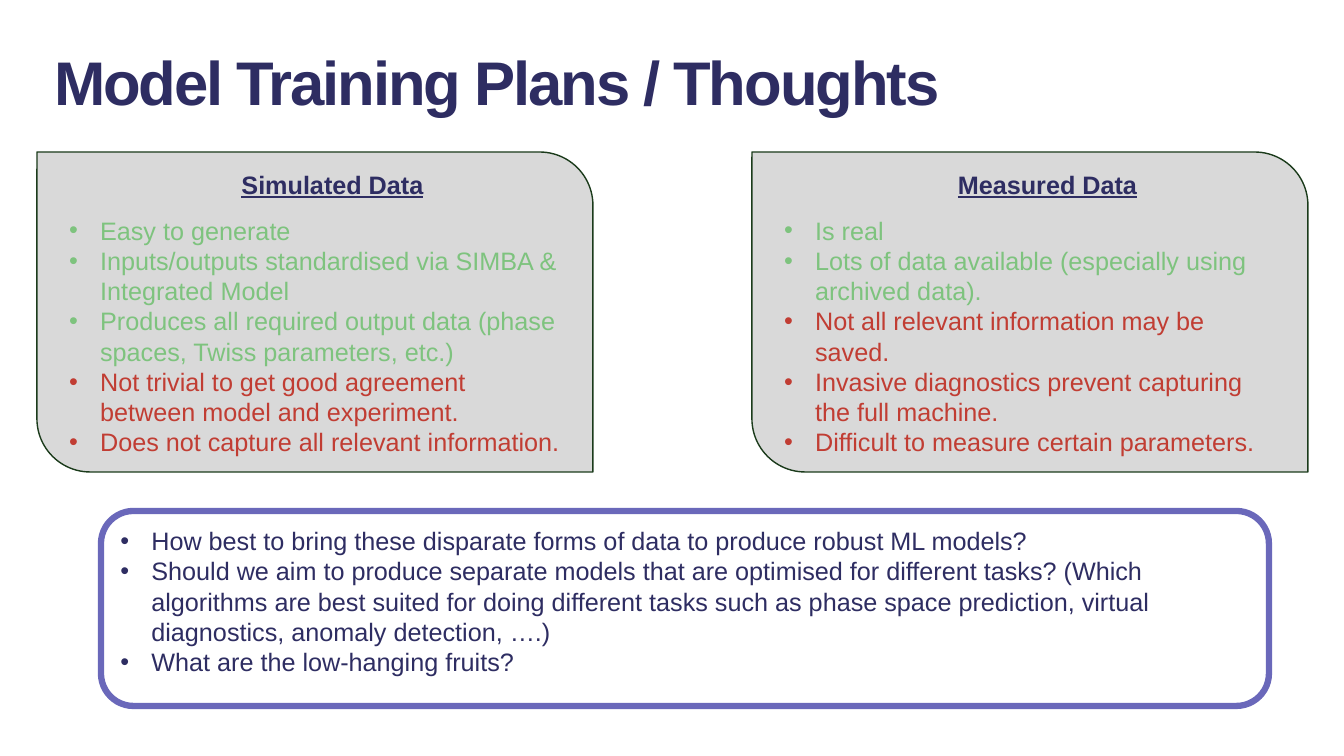
from lxml import etree
from pptx import Presentation
from pptx.dml.color import RGBColor
from pptx.enum.shapes import MSO_SHAPE
from pptx.enum.text import MSO_ANCHOR, MSO_AUTO_SIZE, PP_ALIGN
from pptx.oxml.ns import qn
from pptx.util import Emu, Pt

PX = 914400 / 100.8
NAVY = RGBColor(0x2E, 0x2D, 0x62)
GREEN = RGBColor(0x7E, 0xC3, 0x7E)
RED = RGBColor(0xC1, 0x3D, 0x33)
GREY = RGBColor(0xD9, 0xD9, 0xD9)
DARK_GREEN = RGBColor(0x1B, 0x3B, 0x1B)
VIOLET = RGBColor(0x6A, 0x68, 0xBA)
LEFT, CENTER = PP_ALIGN.LEFT, PP_ALIGN.CENTER
TOP, MIDDLE = MSO_ANCHOR.TOP, MSO_ANCHOR.MIDDLE
NO_FIT = MSO_AUTO_SIZE.NONE
DIAGONAL, ROUNDED = MSO_SHAPE.ROUND_2_DIAG_RECTANGLE, MSO_SHAPE.ROUNDED_RECTANGLE


def px(*lengths):
    return [Emu(round(n * PX)) for n in lengths]


def write(sp, lines, size=18, bold=False, underline=False, align=LEFT,
          anchor=TOP, bullet=False, spacing=0):
    """Fill a shape with (text, colour) paragraphs."""
    tf = sp.text_frame
    tf.word_wrap = True
    tf.auto_size = NO_FIT
    tf.vertical_anchor = anchor
    for i, (text, color) in enumerate(lines):
        p = tf.add_paragraph() if i else tf.paragraphs[0]
        p.alignment = align
        p.space_before = Pt(0)
        p.line_spacing = 1.0
        pPr = p._p.get_or_add_pPr()
        indent = px(31)[0] if bullet else 0
        pPr.set("marL", str(indent))
        pPr.set("indent", str(-indent))
        if bullet:
            etree.SubElement(pPr, qn("a:buFont")).set("typeface", "Arial")
            etree.SubElement(pPr, qn("a:buChar")).set("char", "•")
        else:
            etree.SubElement(pPr, qn("a:buNone"))
        r = p.add_run()
        r.text = text
        r.font.name = "Arial"
        r.font.size = Pt(size)
        r.font.bold = bold
        r.font.underline = underline
        r.font.color.rgb = color
        if spacing:
            r._r.get_or_add_rPr().set("spc", str(spacing))


# Slide on the Comparison layout: title, two headings, two lists
prs = Presentation()
prs.slide_width, prs.slide_height = px(1344, 756)
s = prs.slides.add_slide(prs.slide_layouts[4])
ph = {sp.placeholder_format.idx: sp for sp in s.placeholders}

# Title
title = s.shapes.title
title.left, title.top, title.width, title.height = px(44, 38, 1288, 85)
write(title, [("Model Training Plans / Thoughts", NAVY)],
      size=44, bold=True, anchor=MIDDLE, spacing=-150)

# Cards: left edge, heading, heading and list placeholders, pros, cons
CARDS = [
    (37, "Simulated Data", ph[1], ph[2],
     ["Easy to generate",
      "Inputs/outputs standardised via SIMBA & Integrated Model",
      "Produces all required output data (phase spaces, Twiss parameters, etc.)"],
     ["Not trivial to get good agreement between model and experiment.",
      "Does not capture all relevant information."]),
    (752, "Measured Data", ph[3], ph[4],
     ["Is real",
      "Lots of data available (especially using archived data)."],
     ["Not all relevant information may be saved.",
      "Invasive diagnostics prevent capturing the full machine.",
      "Difficult to measure certain parameters."]),
]
for x, name, heading, points, pros, cons in CARDS:
    card = s.shapes.add_shape(DIAGONAL, *px(x, 152, 556, 320))
    card.adjustments[0], card.adjustments[1] = 0, 0.16667
    card.shadow.inherit = False
    card.fill.solid()
    card.fill.fore_color.rgb = GREY
    card.line.color.rgb = DARK_GREEN
    card.line.width = Pt(1)
    s.shapes._spTree.insert(2, card._element)  # behind the placeholders

    heading.left, heading.top, heading.width, heading.height = px(x + 193, 164, 205, 41)
    write(heading, [(name, NAVY)], bold=True, underline=True, align=CENTER)
    points.left, points.top, points.width, points.height = px(x + 22, 210, 512, 254)
    write(points, [(t, GREEN) for t in pros] + [(t, RED) for t in cons], bullet=True)

# Open questions
QUESTIONS = [
    "How best to bring these disparate forms of data to produce robust ML models?",
    "Should we aim to produce separate models that are optimised for different tasks? "
    "(Which algorithms are best suited for doing different tasks such as phase space "
    "prediction, virtual diagnostics, anomaly detection, ….)",
    "What are the low-hanging fruits?",
]
box = s.shapes.add_shape(ROUNDED, *px(101, 511, 1168, 195))
box.shadow.inherit = False
box.fill.background()
box.line.color.rgb = VIOLET
box.line.width = Pt(4.5)
write(box, [(t, NAVY) for t in QUESTIONS], bullet=True)

prs.save("out.pptx")
